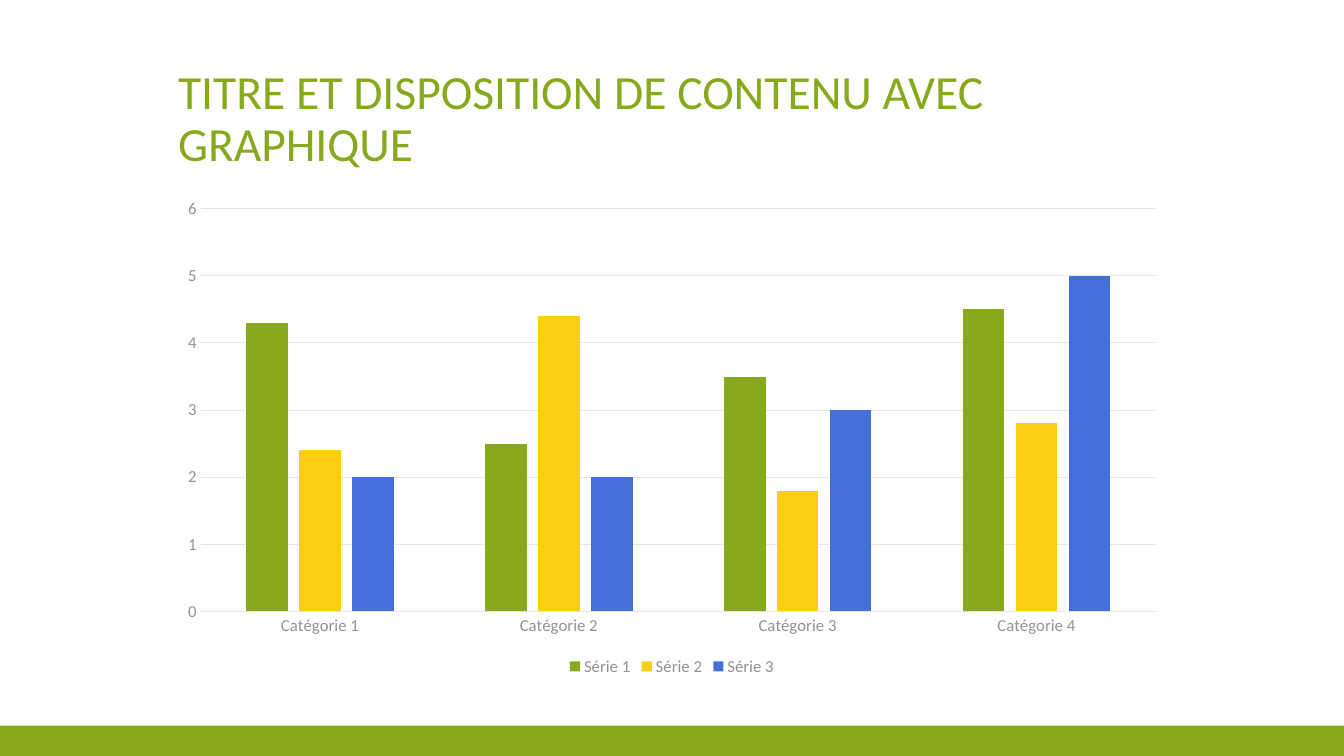
from pptx import Presentation
from pptx.chart.data import CategoryChartData
from pptx.dml.color import RGBColor
from pptx.enum.chart import XL_CHART_TYPE, XL_LEGEND_POSITION, XL_TICK_MARK
from pptx.enum.shapes import MSO_SHAPE
from pptx.enum.text import MSO_ANCHOR, MSO_AUTO_SIZE, PP_ALIGN
from pptx.util import Inches, Pt

COLUMNS = XL_CHART_TYPE.COLUMN_CLUSTERED
BOTTOM_LEGEND = XL_LEGEND_POSITION.BOTTOM
NO_TICK = XL_TICK_MARK.NONE
RECTANGLE = MSO_SHAPE.RECTANGLE
ANCHOR_BOTTOM = MSO_ANCHOR.BOTTOM
NO_AUTOFIT = MSO_AUTO_SIZE.NONE
LEFT = PP_ALIGN.LEFT

WIDTH, HEIGHT = Inches(13.33), Inches(7.5)
FONT = "Calibri"
GREEN, GREY, PALE = "87A91B", "939393", "E6E6E6"
CATEGORIES = [f"Catégorie {number}" for number in range(1, 5)]
SERIES = [
    ("Série 1", (4.3, 2.5, 3.5, 4.5), GREEN),
    ("Série 2", (2.4, 4.4, 1.8, 2.8), "FBCE11"),
    ("Série 3", (2, 2, 3, 5), "446ED8"),
]


def color(hex_value):
    return RGBColor.from_string(hex_value)


def share(left, top, width, height):
    return (int(WIDTH * left), int(HEIGHT * top),
            int(WIDTH * width), int(HEIGHT * height))


def apply(target, values):
    for name, value in values.items():
        setattr(target, name, value)


def style_font(font, size, hex_value):
    apply(font, {"name": FONT, "size": Pt(size), "bold": False})
    font.color.rgb = color(hex_value)


def style_line(line):
    line.color.rgb = color(PALE)
    line.width = Pt(0.75)


def add_footer_band(slide, box):
    band = slide.shapes.add_shape(RECTANGLE, *box)
    band.shadow.inherit = False
    band.fill.solid()
    band.fill.fore_color.rgb = color(GREEN)
    band.line.fill.background()


def place_title(slide, box, text):
    title = slide.shapes.title
    apply(title, dict(zip(("left", "top", "width", "height"), box)))
    apply(title.text_frame, {
        "text": text, "word_wrap": True,
        "auto_size": NO_AUTOFIT, "vertical_anchor": ANCHOR_BOTTOM,
    })
    heading = title.text_frame.paragraphs[0]
    apply(heading, {"alignment": LEFT, "line_spacing": 0.9})
    style_font(heading.runs[0].font, 34, GREEN)


def add_series_chart(slide, box):
    data = CategoryChartData()
    data.categories = CATEGORIES
    for name, values, _ in SERIES:
        data.add_series(name, values)
    chart = slide.shapes.add_chart(COLUMNS, *box, data).chart
    apply(chart, {"has_title": False, "has_legend": True})
    style_font(chart.font, 10, "595959")

    columns = chart.plots[0]
    apply(columns, {"gap_width": 219, "overlap": -27, "vary_by_categories": False})
    for series, (_, _, fill) in zip(columns.series, SERIES):
        series.format.fill.solid()
        series.format.fill.fore_color.rgb = color(fill)

    for axis in (chart.category_axis, chart.value_axis):
        apply(axis, {"major_tick_mark": NO_TICK, "minor_tick_mark": NO_TICK})
        style_font(axis.tick_labels.font, 12, GREY)
    style_line(chart.category_axis.format.line)
    apply(chart.value_axis, {
        "minimum_scale": 0, "maximum_scale": 6,
        "major_unit": 1, "has_major_gridlines": True,
    })
    chart.value_axis.format.line.fill.background()
    style_line(chart.value_axis.major_gridlines.format.line)

    apply(chart.legend, {"position": BOTTOM_LEGEND, "include_in_layout": False})
    style_font(chart.legend.font, 12, GREY)


def main():
    deck = Presentation()
    apply(deck, {"slide_width": WIDTH, "slide_height": HEIGHT})
    slide = deck.slides.add_slide(deck.slide_layouts[5])
    add_footer_band(slide, share(0, 0.96, 1, 0.04))
    place_title(slide, share(1 / 8, 1 / 15, 3 / 4, 1 / 6),
                "TITRE ET DISPOSITION DE CONTENU AVEC GRAPHIQUE")
    add_series_chart(slide, share(1 / 8, 0.25, 3 / 4, 0.65))
    deck.save("out.pptx")


if __name__ == "__main__":
    main()
